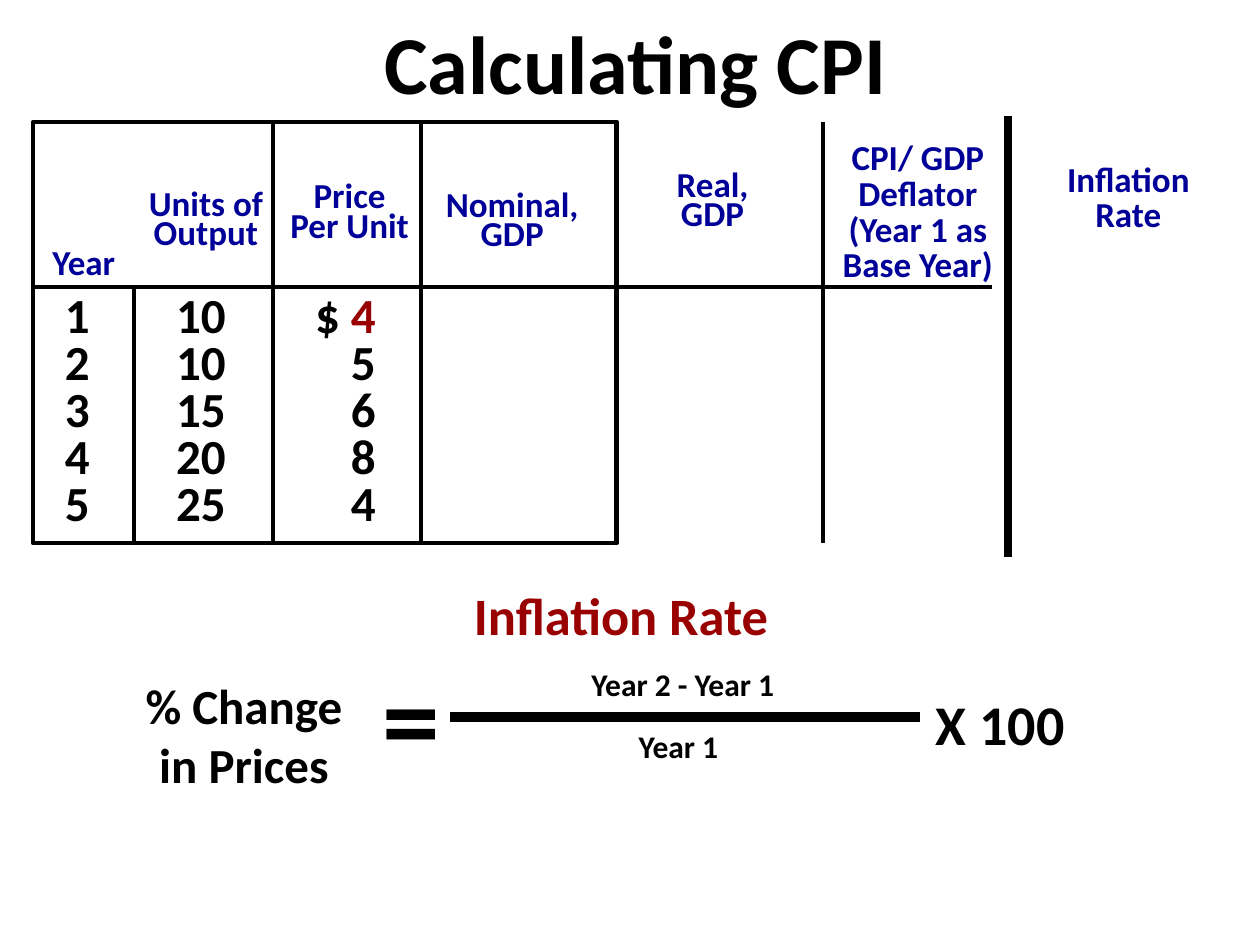
from dataclasses import dataclass

from lxml.etree import SubElement
from pptx import Presentation
from pptx.dml.color import RGBColor
from pptx.enum.shapes import MSO_CONNECTOR as Conn, MSO_SHAPE as Shp
from pptx.enum.text import MSO_ANCHOR as Anchor, MSO_AUTO_SIZE as Fit, PP_ALIGN as Align
from pptx.oxml.ns import qn
from pptx.util import Emu, Pt

PX = 9144
BLACK, BLUE, RED = "000000", "000099", "990000"
FONT = "Calibri"


@dataclass
class Label:
    """A text box with its lines and their common format."""
    x: int
    y: int
    w: int
    h: int
    lines: list[str]
    size: int = 20
    color: str = BLUE
    align: Align = Align.CENTER
    spacing: float = 1.0
    wrap: bool = False


@dataclass
class Rule:
    """A straight line between two points."""
    x1: int
    y1: int
    x2: int
    y2: int
    width: float = 2.25


def px(n: int) -> Emu:
    """Turn px into EMU."""
    return Emu(n * PX)


def rgb(color: str) -> RGBColor:
    """Turn a hex string into a colour."""
    return RGBColor.from_string(color)


def write(tf, label: Label) -> None:
    """Fill a text frame with the lines of a label."""
    tf.auto_size = Fit.NONE
    tf.word_wrap = label.wrap
    tf.vertical_anchor = Anchor.TOP
    for i, line in enumerate(label.lines):
        p = tf.paragraphs[0] if i == 0 else tf.add_paragraph()
        p.alignment = label.align
        p.line_spacing = label.spacing
        p.font.name = FONT
        p.font.size = Pt(label.size)
        p.font.bold = True
        p.font.color.rgb = rgb(label.color)
        p.add_run().text = line


def add_label(s, label: Label):
    """Draw a label and return its text frame."""
    sp = s.shapes.add_textbox(px(label.x), px(label.y), px(label.w), px(label.h))
    write(sp.text_frame, label)
    return sp.text_frame


def add_rule(s, rule: Rule) -> None:
    """Draw a black line without a shadow."""
    sp = s.shapes.add_connector(
        Conn.STRAIGHT, px(rule.x1), px(rule.y1), px(rule.x2), px(rule.y2))
    sp.line.color.rgb = rgb(BLACK)
    sp.line.width = Pt(rule.width)
    SubElement(sp._element.spPr, qn("a:effectLst"))


def add_title(s, label: Label) -> None:
    """Place and format the title placeholder."""
    sp = s.shapes.title
    sp.left, sp.top, sp.width, sp.height = map(px, (label.x, label.y, label.w, label.h))
    write(sp.text_frame, label)


def add_frame(s, x: int, y: int, w: int, h: int) -> None:
    """Draw the outline of the table."""
    sp = s.shapes.add_shape(Shp.RECTANGLE, px(x), px(y), px(w), px(h))
    sp.shadow.inherit = False
    sp.fill.background()
    sp.line.color.rgb = rgb(BLACK)
    sp.line.width = Pt(2.25)


TITLE = Label(100, 17, 809, 76, ["Calculating CPI"], 47, BLACK, spacing=0.85, wrap=True)

HEADERS = [
    Label(27, 195, 79, 33, ["Year"], spacing=0.7),
    Label(107, 148, 113, 57, ["Units of", "Output"], spacing=0.7),
    Label(217, 142, 121, 57, ["Price", "Per Unit"], spacing=0.7),
    Label(342, 149, 129, 57, ["Nominal,", "GDP"], spacing=0.7),
    Label(525, 133, 81, 57, ["Real,", "GDP"], spacing=0.7),
    Label(650, 108, 157, 123, ["CPI/ GDP Deflator (Year 1 as Base Year)"],
          spacing=0.85, wrap=True),
    Label(817, 125, 157, 67, ["Inflation Rate"], spacing=0.85, wrap=True),
]

COLUMNS = [
    (41, 40, ["1", "2", "3", "4", "5"], False),
    (116, 73, ["10", "10", "15", "20", "25"], True),
    (239, 69, ["$ ", "5", "6", "8", "4"], False),
]

RULES = [
    Rule(26, 228, 787, 228),
    Rule(106, 228, 106, 430),
    *(Rule(x, 97, x, 431) for x in (217, 334, 489, 653)),
    Rule(800, 92, 800, 442, 4.5),
    Rule(357, 569, 730, 569, 6),
]

FORMULA = [
    Label(72, 458, 842, 110, ["Inflation Rate"], 30, RED, wrap=True),
    Label(95, 531, 206, 103, ["% Change ", "in Prices "], 28, BLACK),
    Label(290, 508, 72, 120, ["="], 66, BLACK),
    Label(377, 523, 330, 50, ["Year 2 - Year 1"], 18, BLACK, wrap=True),
    Label(481, 572, 115, 50, ["Year 1"], 18, BLACK),
    Label(733, 542, 150, 63, ["X 100"], 32, BLACK, Align.LEFT, wrap=True),
]


def main() -> None:
    """Build the slide and save it."""
    prs = Presentation()
    prs.slide_width, prs.slide_height = px(1000), px(750)
    s = prs.slides.add_slide(prs.slide_layouts[5])
    add_title(s, TITLE)
    add_frame(s, 26, 97, 464, 334)
    for x, w, values, wrap in COLUMNS:
        tf = add_label(s, Label(x, 230, w, 197, values, 28, BLACK, Align.RIGHT, 0.8, wrap))
    r = tf.paragraphs[0].add_run()
    r.text = "4"
    r.font.color.rgb = rgb(RED)
    for rule in RULES:
        add_rule(s, rule)
    for label in HEADERS + FORMULA:
        add_label(s, label)
    prs.save("out.pptx")


if __name__ == "__main__":
    main()
